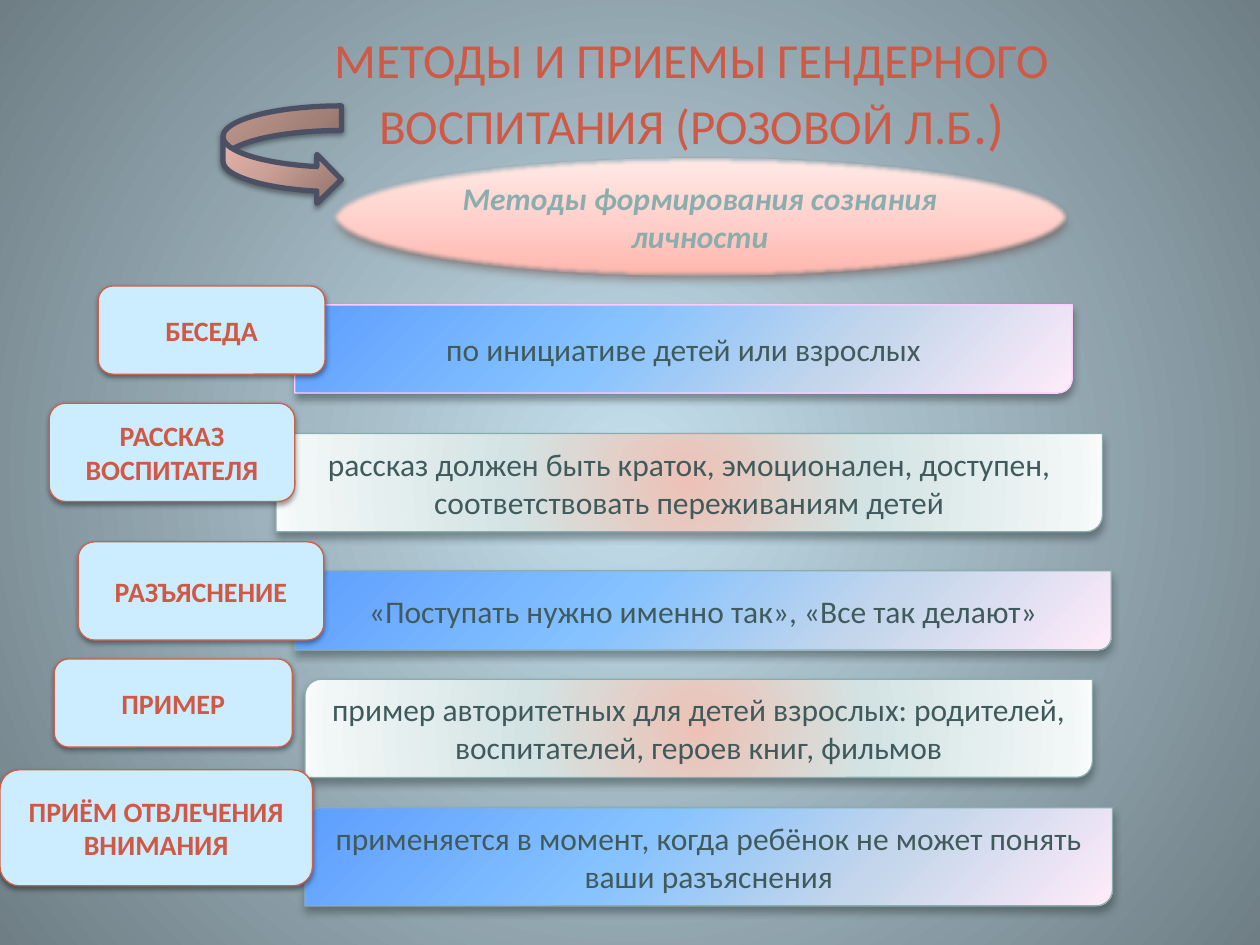
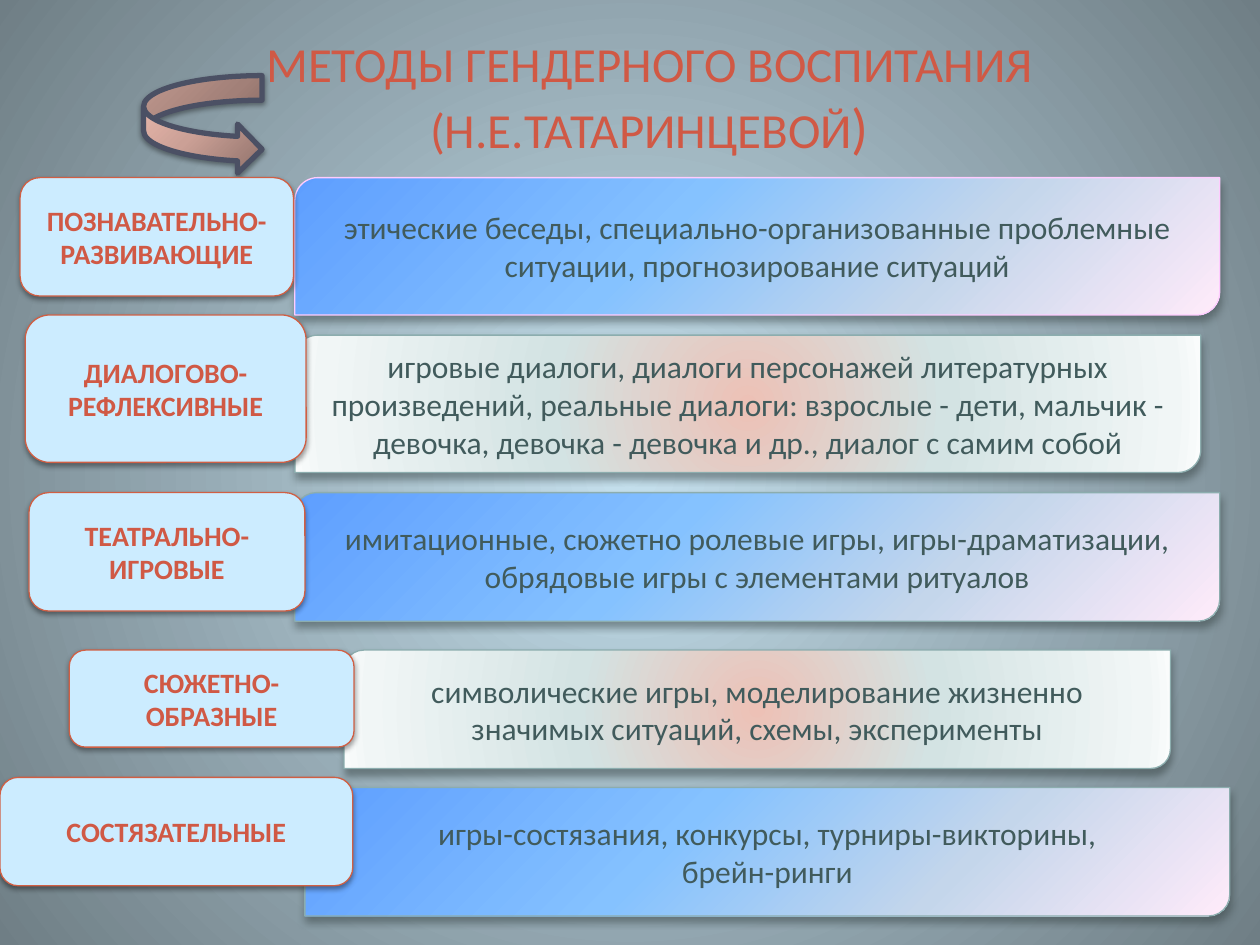
from dataclasses import dataclass
from lxml.etree import SubElement
from pptx import Presentation
from pptx.dml.color import RGBColor
from pptx.enum.shapes import MSO_SHAPE
from pptx.enum.text import MSO_ANCHOR, PP_ALIGN
from pptx.oxml.ns import qn
from pptx.util import Inches, Pt


@dataclass(frozen=True)
class Theme:
    font: str = "Calibri"
    red: str = "D05945"
    edge: str = "D05F44"
    ink: str = "415B5C"
    sage: str = "8CADAE"
    pink: str = "FFCCFF"
    ice: str = "CCECFF"
    steel: str = "4B5064"
    head: int = 28
    tail: int = 32
    body: int = 18
    tag: int = 16
    thin: float = 0.75
    thick: float = 3


@dataclass(frozen=True)
class Blend:
    stops: tuple
    angle: int = 0
    focus: tuple = ()


@dataclass(frozen=True)
class Shade:
    color: str
    alpha: int
    blur: float
    drop: float


T = Theme()
CENTER = (50, 50, 50, 50)
SKY = Blend(((0, "C5E0ED"), (100, "6F7E85")), focus=CENTER)
BLUE = Blend(((0, "5E9EFF"), (40, "85C2FF"), (70, "C4D6EB"), (100, "FFEBFA")), 45)
PEARL = Blend(((0, "EDC1B6"), (43, "D3E3E3"), (93, "F1F6F6"), (100, "FAFCFC")), focus=CENTER)
ROSE = Blend(((0, "FFB5AC"), (35, "FFCAC4"), (100, "FFEBE8")), 270)
CLAY = Blend(((0, "8F716A"), (50, "CBA096"), (100, "F1BEB2")), focus=(100, 100, 0, 0))
DEEP = Shade("313D3D", 48, 4.5, 3)
WARM = Shade("4B2218", 48, 4.5, 3)
SOFT = Shade("000000", 38, 3.1, 1.6)


def add(parent, tag, **attrs):
    return SubElement(parent, qn(tag), {key: str(val) for key, val in attrs.items()})


def tint(parent, color, alpha=100):
    node = add(parent, "a:srgbClr", val=color)
    if alpha < 100:
        add(node, "a:alpha", val=alpha * 1000)


def paint(owner, fill, blend):
    fill.gradient()
    grad = next(owner.element.iter(qn("a:gradFill")))
    for child in list(grad):
        grad.remove(child)
    stops = add(grad, "a:gsLst")
    for place, color in blend.stops:
        tint(add(stops, "a:gs", pos=place * 1000), color)
    if blend.focus:
        ring = add(grad, "a:path", path="circle")
        sides = {side: val * 1000 for side, val in zip("ltrb", blend.focus)}
        add(ring, "a:fillToRect", **sides)
    else:
        add(grad, "a:lin", ang=blend.angle * 60000, scaled=0)


def cast(shape, shade, blur=0):
    shape.shadow.inherit = False
    effects = shape.element.spPr.find(qn("a:effectLst"))
    node = add(effects, "a:outerShdw", blurRad=int(Pt(shade.blur)), dist=int(Pt(shade.drop)),
               dir=90 * 60000, algn="ctr", rotWithShape=0)
    tint(node, shade.color, shade.alpha)
    if blur:
        add(effects, "a:softEdge", rad=int(Pt(blur)))


def write(shape, text, size, color, bold=False, italic=False):
    frame = shape.text_frame
    frame.word_wrap = True
    frame.vertical_anchor = MSO_ANCHOR.MIDDLE
    frame.text = text
    for para in frame.paragraphs:
        para.alignment = PP_ALIGN.CENTER
        for run in para.runs:
            style(run, size, color, bold, italic)


def style(run, size, color, bold=False, italic=False):
    font = run.font
    font.name, font.size, font.bold, font.italic = T.font, Pt(size), bold, italic
    font.color.rgb = RGBColor.from_string(color)


def form(slide, kind, box, fill, line, shade, width=T.thin, blur=0):
    shape = slide.shapes.add_shape(kind, *map(Inches, box))
    cast(shape, shade, blur)
    if isinstance(fill, Blend):
        paint(shape, shape.fill, fill)
    else:
        shape.fill.solid()
        shape.fill.fore_color.rgb = RGBColor.from_string(fill)
    shape.line.color.rgb = RGBColor.from_string(line)
    shape.line.width = Pt(width)
    return shape


def title(slide, box, text, tail):
    shape = slide.shapes.add_textbox(*map(Inches, box))
    write(shape, "", T.head, T.red)
    para = shape.text_frame.paragraphs[0]
    para.text = text
    for run in para.runs:
        style(run, T.head, T.red)
    last = para.add_run()
    last.text = tail
    style(last, T.tail, T.red)


def bar(slide, box, text, index):
    fill = PEARL if index % 2 else BLUE
    line = T.sage if index else T.pink
    shape = form(slide, MSO_SHAPE.ROUND_2_DIAG_RECTANGLE, box, fill, line, DEEP)
    write(shape, text, T.body, T.ink)


def label(slide, box, text):
    shape = form(slide, MSO_SHAPE.ROUNDED_RECTANGLE, box, T.ice, T.edge, SOFT)
    write(shape, text, T.tag, T.red, bold=True)


def arrow(slide, left, top):
    form(slide, MSO_SHAPE.CURVED_RIGHT_ARROW, (left, top, 0.94, 0.78), CLAY, T.steel, SOFT, T.thick)


def oval(slide, box, text):
    shape = form(slide, MSO_SHAPE.OVAL, box, ROSE, T.edge, WARM, blur=2.5)
    write(shape, text, T.body, T.sage, bold=True, italic=True)


def page(deck, head, turn, rows):
    slide = deck.slides.add_slide(deck.slide_layouts[6])
    paint(slide, slide.background.fill, SKY)
    for index, (name, tag, text, box) in reversed(list(enumerate(rows))):
        bar(slide, box, text, index)
    title(slide, *head)
    arrow(slide, *turn)
    for name, tag, text, box in rows:
        label(slide, tag, name)
    return slide


FIRST = [
    ("БЕСЕДА", (0.78, 2.27, 1.8, 0.7),
     "по инициативе детей или взрослых", (2.34, 2.42, 6.17, 0.7)),
    ("РАССКАЗ ВОСПИТАТЕЛЯ", (0.39, 3.2, 1.95, 0.78),
     "рассказ должен быть краток, эмоционален, доступен, соответствовать переживаниям детей",
     (2.19, 3.44, 6.56, 0.78)),
    ("РАЗЪЯСНЕНИЕ", (0.62, 4.3, 1.95, 0.78),
     "«Поступать нужно именно так», «Все так делают»", (2.34, 4.53, 6.48, 0.63)),
    ("ПРИМЕР", (0.43, 5.23, 1.89, 0.7),
     "пример авторитетных для детей взрослых: родителей, воспитателей, героев книг, фильмов",
     (2.42, 5.39, 6.25, 0.78)),
    ("ПРИЁМ ОТВЛЕЧЕНИЯ ВНИМАНИЯ", (0, 6.11, 2.48, 0.92),
     "применяется в момент, когда ребёнок не может понять ваши разъяснения",
     (2.42, 6.41, 6.41, 0.78)),
]
SECOND = [
    ("ПОЗНАВАТЕЛЬНО-РАЗВИВАЮЩИЕ", (0.16, 1.41, 2.17, 0.94),
     "этические беседы, специально-организованные проблемные ситуации, "
     "прогнозирование ситуаций", (2.34, 1.41, 7.34, 1.09)),
    ("ДИАЛОГОВО-РЕФЛЕКСИВНЫЕ", (0.2, 2.5, 2.23, 1.17),
     "игровые диалоги, диалоги персонажей литературных произведений, реальные диалоги: "
     "взрослые - дети, мальчик - девочка, девочка - девочка и др., диалог с самим собой",
     (2.34, 2.66, 7.19, 1.09)),
    ("ТЕАТРАЛЬНО-ИГРОВЫЕ", (0.23, 3.91, 2.19, 0.94),
     "имитационные, сюжетно ролевые игры, игры-драматизации, "
     "обрядовые игры с элементами ритуалов", (2.34, 3.91, 7.34, 1.02)),
    ("СЮЖЕТНО-ОБРАЗНЫЕ", (0.55, 5.16, 2.26, 0.77),
     "символические игры, моделирование жизненно\vзначимых ситуаций, схемы, эксперименты",
     (2.73, 5.16, 6.56, 0.94)),
    ("СОСТЯЗАТЕЛЬНЫЕ", (0, 6.17, 2.8, 0.86),
     "игры-состязания, конкурсы, турниры-викторины,\nбрейн-ринги", (2.42, 6.25, 7.34, 1.02)),
]


def main():
    deck = Presentation()
    deck.slide_width, deck.slide_height = Inches(10), Inches(7.5)
    head = ((0.98, 0.29, 9.02, 0.89),
            "МЕТОДЫ И ПРИЕМЫ ГЕНДЕРНОГО\vВОСПИТАНИЯ (РОЗОВОЙ Л.Б", ".)")
    slide = page(deck, head, (1.77, 0.84), FIRST)
    oval(slide, (2.64, 1.25, 5.83, 0.94), "Методы формирования сознания личности")
    head = ((0.51, 0.29, 9.29, 0.96),
            "МЕТОДЫ ГЕНДЕРНОГО ВОСПИТАНИЯ\v(Н.Е.ТАТАРИНЦЕВОЙ", ")")
    page(deck, head, (1.14, 0.6), SECOND)
    deck.save("out.pptx")


if __name__ == "__main__":
    main()
